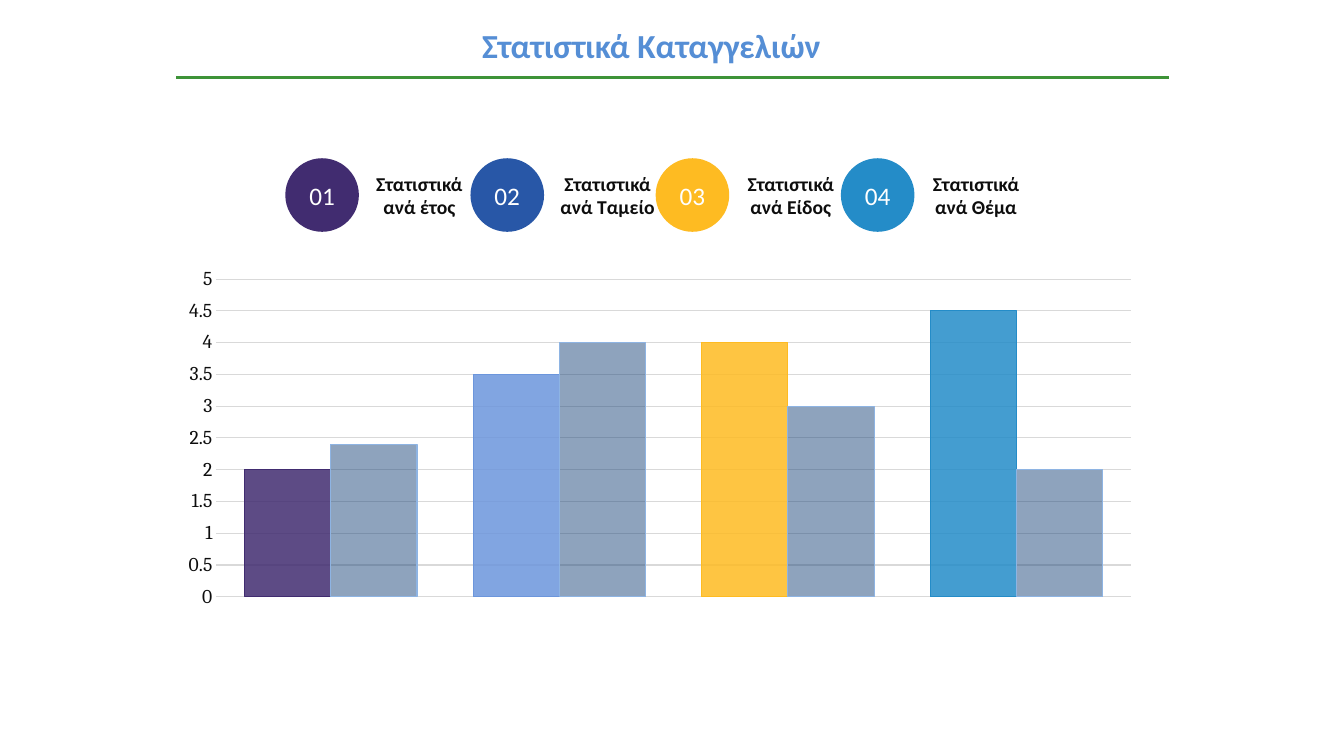
from lxml.etree import SubElement
from pptx import Presentation
from pptx.chart.data import CategoryChartData
from pptx.dml.color import RGBColor
from pptx.enum.chart import XL_CHART_TYPE, XL_TICK_MARK
from pptx.enum.shapes import MSO_CONNECTOR, MSO_SHAPE
from pptx.enum.text import MSO_ANCHOR, PP_ALIGN
from pptx.oxml import parse_xml
from pptx.oxml.ns import nsdecls, qn
from pptx.util import Inches, Pt

PURPLE = RGBColor(0x41, 0x2C, 0x70)
BLUE = RGBColor(0x28, 0x57, 0xA7)
PALE_BLUE = RGBColor(0x6C, 0x96, 0xDC)
YELLOW = RGBColor(0xFE, 0xBB, 0x22)
CYAN = RGBColor(0x24, 0x8C, 0xC8)
NAVY = RGBColor(0x1F, 0x49, 0x7D)
SKY = RGBColor(0x8E, 0xB4, 0xE3)
TITLE_BLUE = RGBColor(0x55, 0x8E, 0xD5)
GREEN = RGBColor(0x3E, 0x93, 0x38)
INK = RGBColor(0x0D, 0x0D, 0x0D)
GRID = RGBColor(0xD9, 0xD9, 0xD9)
WHITE = RGBColor(0xFF, 0xFF, 0xFF)

# Label, circle colour, bar colour, label width
TOPICS = [
    ("Στατιστικά ανά έτος", PURPLE, PURPLE, 1.1),
    ("Στατιστικά ανά Ταμείο", BLUE, PALE_BLUE, 1.16),
    ("Στατιστικά ανά Είδος", YELLOW, YELLOW, 1.12),
    ("Στατιστικά ανά Θέμα", CYAN, CYAN, 1.12),
]
FIRST_CIRCLE, LAST_CIRCLE = 2.83, 8.34
PITCH = (LAST_CIRCLE - FIRST_CIRCLE) / (len(TOPICS) - 1)


def write_text(shape, text, size, color, bold=False, wrap=True):
    frame = shape.text_frame
    frame.text = text
    frame.word_wrap = wrap
    frame.vertical_anchor = MSO_ANCHOR.MIDDLE
    paragraph = frame.paragraphs[0]
    paragraph.alignment = PP_ALIGN.CENTER
    font = paragraph.runs[0].font
    font.name, font.size, font.bold = "Calibri", Pt(size), bold
    font.color.rgb = color


def add_label(page, text, left, top, width, height, size, color, wrap=True):
    box = page.shapes.add_textbox(
        Inches(left), Inches(top), Inches(width), Inches(height))
    write_text(box, text, size, color, bold=True, wrap=wrap)


def add_number_circle(page, number, left, color):
    circle = page.shapes.add_shape(
        MSO_SHAPE.OVAL, Inches(left), Inches(1.57), Inches(0.73), Inches(0.73))
    circle.shadow.inherit = False
    circle.fill.solid()
    circle.fill.fore_color.rgb = color
    circle.line.fill.background()
    write_text(circle, f"{number:02}", 18, WHITE, wrap=False)


def add_rule(page):
    rule = page.shapes.add_connector(
        MSO_CONNECTOR.STRAIGHT,
        Inches(1.75), Inches(0.77), Inches(11.59), Inches(0.77))
    rule.line.color.rgb = GREEN
    rule.line.width = Pt(2)
    SubElement(rule._element.spPr, qn("a:effectLst"))


def paint(part, fill, line):
    part.format.fill.solid()
    part.format.fill.fore_color.rgb = fill
    part.format.line.color.rgb = line
    part.format.line.width = Pt(0.75)


def set_opacity(series, percent):
    """Apply one opacity to the series fill and its point fills, not outlines."""
    for color in series._element.xpath(".//c:spPr/a:solidFill/a:srgbClr"):
        SubElement(color, qn("a:alpha")).set("val", str(percent * 1000))


def set_plot_area(chart, x, y, width, height):
    """Fix the inner plot area, as fractions of the chart."""
    plot_area = chart._chartSpace.chart.plotArea
    for layout in plot_area.findall(qn("c:layout")):
        plot_area.remove(layout)
    plot_area.insert(0, parse_xml(
        f'<c:layout {nsdecls("c")}><c:manualLayout>'
        '<c:layoutTarget val="inner"/><c:xMode val="edge"/><c:yMode val="edge"/>'
        f'<c:x val="{x}"/><c:y val="{y}"/><c:w val="{width}"/><c:h val="{height}"/>'
        '</c:manualLayout></c:layout>'))


def style_value_axis(axis):
    axis.minimum_scale, axis.maximum_scale, axis.major_unit = 0, 5, 0.5
    axis.major_tick_mark = axis.minor_tick_mark = XL_TICK_MARK.NONE
    axis.format.line.fill.background()
    axis.major_gridlines.format.line.color.rgb = GRID
    axis.major_gridlines.format.line.width = Pt(0.75)
    font = axis.tick_labels.font
    font.name, font.size = "Cambria", Pt(14)
    font.color.rgb = INK


def add_complaints_chart(page):
    data = CategoryChartData()
    data.categories = ["1", "2", "3", "4"]
    data.add_series("Series 1", [2, 3.5, 4, 4.5])
    data.add_series("Series 2", [2.4, 4, 3, 2])
    chart = page.shapes.add_chart(
        XL_CHART_TYPE.COLUMN_CLUSTERED,
        Inches(1.66), Inches(2.45), Inches(9.75), Inches(3.99), data).chart
    chart.has_title = chart.has_legend = False
    chart.font.name, chart.font.size = "Calibri", Pt(10)
    chart.category_axis.visible = False
    style_value_axis(chart.value_axis)
    set_plot_area(chart, 0.05, 0.08, 0.93, 0.79)

    plot = chart.plots[0]
    plot.gap_width, plot.overlap, plot.vary_by_categories = 65, 0, False
    topics, totals = plot.series
    paint(topics, BLUE, PALE_BLUE)
    for index, (_, _, bar_color, _) in enumerate(TOPICS):
        paint(topics.points[index], bar_color, bar_color)
    set_opacity(topics, 85)
    paint(totals, NAVY, SKY)
    set_opacity(totals, 50)


def main():
    deck = Presentation()
    deck.slide_width, deck.slide_height = Inches(13.33), Inches(7.5)
    page = deck.slides.add_slide(deck.slide_layouts[6])
    add_complaints_chart(page)
    add_label(page, "Στατιστικά Καταγγελιών", 4.58, 0.2, 3.76, 0.5,
              24, TITLE_BLUE, wrap=False)
    add_rule(page)
    for index, (text, color, _, width) in enumerate(TOPICS):
        left = FIRST_CIRCLE + index * PITCH
        add_number_circle(page, index + 1, left, color)
        add_label(page, text, left + 0.78, 1.65, width, 0.57, 14, INK)
    deck.save("out.pptx")


if __name__ == "__main__":
    main()
